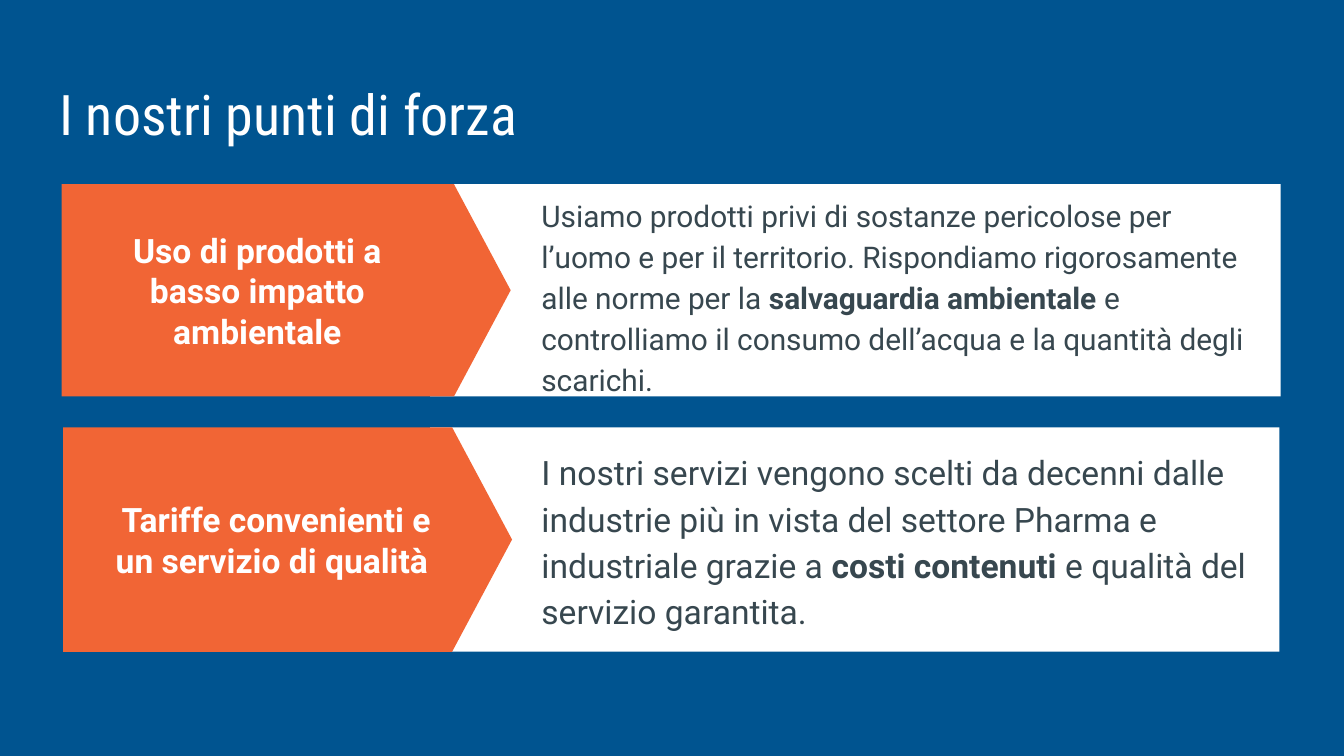
from pptx import Presentation
from pptx.dml.color import RGBColor
from pptx.enum.shapes import MSO_SHAPE
from pptx.enum.text import MSO_ANCHOR, MSO_AUTO_SIZE, PP_ALIGN
from pptx.util import Inches, Pt

BLUE = RGBColor(0x00, 0x54, 0x90)
ORANGE = RGBColor(0xF1, 0x65, 0x35)
WHITE = RGBColor(0xFF, 0xFF, 0xFF)
SLATE = RGBColor(0x37, 0x47, 0x4F)


class StrengthsPage:
    """Holds the style and the current slide."""

    font = "Roboto"
    title_font = "Roboto Condensed"
    inset = 0.1

    def __init__(self, deck):
        self.page = deck.slides.add_slide(deck.slide_layouts[5])
        fill = self.page.background.fill
        fill.solid()
        fill.fore_color.rgb = BLUE

    def frame(self, box, anchor, bottom=inset):
        frame = box.text_frame
        frame.word_wrap = True
        frame.auto_size = MSO_AUTO_SIZE.NONE
        frame.vertical_anchor = anchor
        frame.margin_left = frame.margin_top = frame.margin_right = Inches(self.inset)
        frame.margin_bottom = Inches(bottom)
        return frame

    def format(self, span, name, size, color, bold=False):
        span.font.name = name
        span.font.size = Pt(size)
        span.font.color.rgb = color
        span.font.bold = bold

    def title(self, text, left, top, width, height):
        box = self.page.shapes.title
        box.left, box.top = Inches(left), Inches(top)
        box.width, box.height = Inches(width), Inches(height)
        frame = self.frame(box, MSO_ANCHOR.TOP)
        frame.text = text
        para = frame.paragraphs[0]
        para.alignment = PP_ALIGN.LEFT
        self.format(para.runs[0], self.title_font, 30, WHITE)

    def band(self, top, height, panel_width, arrow_left):
        """White panel with an orange arrow over its left end."""
        group = self.page.shapes.add_group_shape()
        parts = (
            (MSO_SHAPE.RECTANGLE, 3.2, panel_width, WHITE),
            (MSO_SHAPE.PENTAGON, arrow_left, 3.34, ORANGE),
        )
        for kind, left, width, color in parts:
            shape = group.shapes.add_shape(
                kind, Inches(left), Inches(top), Inches(width), Inches(height))
            shape.shadow.inherit = False
            shape.fill.solid()
            shape.fill.fore_color.rgb = color
            shape.line.fill.background()
            if kind == MSO_SHAPE.PENTAGON:
                shape.adjustments[0] = 0.267

    def text(self, spans, left, top, width, height, size, color,
             align=PP_ALIGN.LEFT, spacing=1.0, bottom=inset):
        """Text box from (text, bold) pairs."""
        box = self.page.shapes.add_textbox(
            Inches(left), Inches(top), Inches(width), Inches(height))
        para = self.frame(box, MSO_ANCHOR.MIDDLE, bottom).paragraphs[0]
        para.alignment = align
        para.line_spacing = spacing
        for words, bold in spans:
            span = para.add_run()
            span.text = words
            self.format(span, self.font, size, color, bold)

    def label(self, words, left, top, height):
        self.text([(words, True)], left, top, 2.65, height, 18, WHITE,
                  align=PP_ALIGN.CENTER)

    def description(self, spans, top, height, size, bottom=inset):
        self.text(spans, 3.93, top, 5.59, height, size, SLATE,
                  spacing=1.15, bottom=bottom)


def main():
    deck = Presentation()
    # Widescreen, 16 to 9
    deck.slide_width = Inches(10)
    deck.slide_height = Inches(10) * 9 // 16
    page = StrengthsPage(deck)
    page.title("I nostri punti di forza", 0.34, 0.49, 9.32, 0.63)

    # Low-impact products
    page.band(1.37, 1.58, 6.33, 0.46)
    page.label("Uso di prodotti a basso impatto ambientale", 0.59, 1.37, 1.58)
    page.description([
        ("Usiamo prodotti privi di sostanze pericolose per l’uomo e per il "
         "territorio. Rispondiamo rigorosamente alle norme per la ", False),
        ("salvaguardia ambientale", True),
        (" e controlliamo il consumo dell’acqua e la quantità degli scarichi.", False),
    ], 1.52, 1.67, 16, bottom=0.42)

    # Fair prices and quality
    page.band(3.18, 1.67, 6.32, 0.47)
    page.label("Tariffe convenienti e un servizio di qualità ", 0.73, 3.58, 0.87)
    page.description([
        ("I nostri servizi vengono scelti da decenni dalle industrie più in "
         "vista del settore Pharma e industriale grazie a ", False),
        ("costi contenuti ", True),
        ("e qualità del servizio garantita.", False),
    ], 3.22, 1.58, 18)

    deck.save("out.pptx")


if __name__ == "__main__":
    main()
